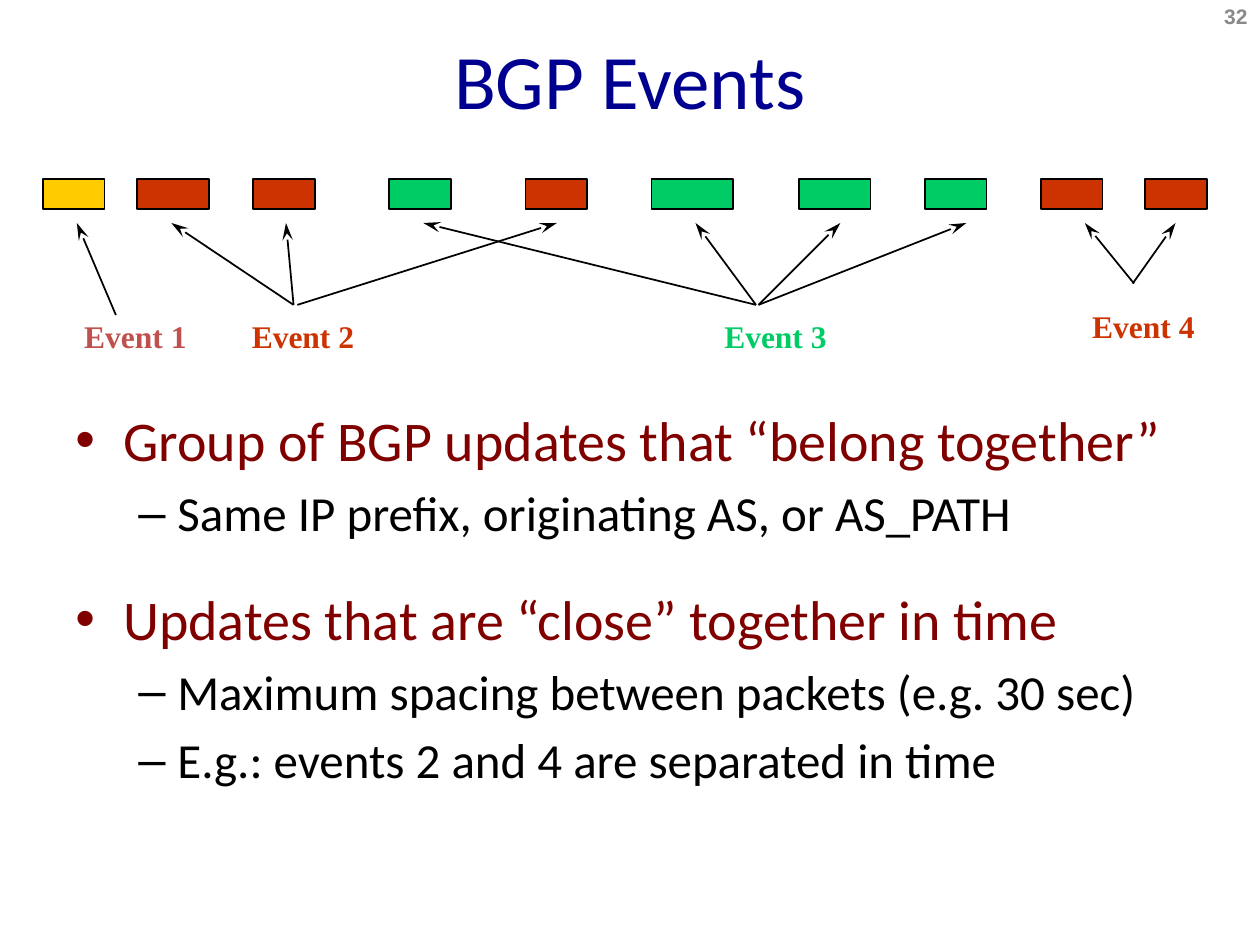
from lxml import etree
from pptx import Presentation
from pptx.dml.color import RGBColor
from pptx.enum.shapes import MSO_CONNECTOR, MSO_SHAPE
from pptx.enum.text import MSO_ANCHOR, PP_ALIGN
from pptx.oxml.ns import qn
from pptx.util import Inches, Pt

RECTANGLE = MSO_SHAPE.RECTANGLE
STRAIGHT = MSO_CONNECTOR.STRAIGHT
TOP, MIDDLE = MSO_ANCHOR.TOP, MSO_ANCHOR.MIDDLE
LEFT, CENTER, RIGHT = PP_ALIGN.LEFT, PP_ALIGN.CENTER, PP_ALIGN.RIGHT

BLACK = RGBColor(0x00, 0x00, 0x00)
YELLOW = RGBColor(0xFF, 0xCC, 0x00)
RED = RGBColor(0xCC, 0x33, 0x00)
GREEN = RGBColor(0x00, 0xCC, 0x66)
ROSE = RGBColor(0xC0, 0x50, 0x4D)
NAVY = RGBColor(0x00, 0x00, 0x90)
MAROON = RGBColor(0x80, 0x00, 0x00)
GRAY = RGBColor(0x89, 0x89, 0x89)

UPDATE_TOP, UPDATE_HEIGHT = 1.42, 0.24
ARROW_TOP = 1.77

# Updates on the timeline: left, width, colour
UPDATES = [
    (0.34, 0.49, YELLOW), (1.09, 0.57, RED), (2.01, 0.49, RED),
    (3.09, 0.49, GREEN), (4.17, 0.49, RED), (5.17, 0.65, GREEN),
    (6.34, 0.57, GREEN), (7.34, 0.49, GREEN), (8.26, 0.49, RED),
    (9.09, 0.49, RED),
]

# Events: label, label left, label top, colour, arrows (tip x, tail x, tail y)
EVENTS = [
    ("Event 1", 0.57, 2.47, ROSE, [(0.61, 0.92, 2.5)]),
    ("Event 2", 1.9, 2.47, RED,
     [(1.36, 2.33, 2.42), (2.27, 2.33, 2.42), (4.42, 2.36, 2.42)]),
    ("Event 3", 5.65, 2.47, GREEN,
     [(3.36, 6, 2.42), (5.52, 6, 2.42), (6.67, 6.02, 2.42), (7.67, 6.02, 2.42)]),
    ("Event 4", 8.57, 2.39, RED, [(8.61, 9, 2.25), (9.33, 8.99, 2.25)]),
]

# Bullet levels: character, text indent, hanging indent, size, colour
LEVELS = [("•", 0.38, 0.38, 32, MAROON), ("–", 0.81, 0.31, 28, BLACK)]

# Bullets: level, space after, text
BULLETS = [
    (0, 0, "Group of BGP updates that “belong together”"),
    (1, 18, "Same IP prefix, originating AS, or AS_PATH"),
    (0, 0, "Updates that are “close” together in time"),
    (1, 0, "Maximum spacing between packets (e.g. 30 sec)"),
    (1, 0, "E.g.: events 2 and 4 are separated in time"),
]


def add_text_frame(slide, left, top, width, height, anchor=TOP, wrap=True):
    box = slide.shapes.add_textbox(
        Inches(left), Inches(top), Inches(width), Inches(height))
    frame = box.text_frame
    frame.word_wrap = wrap
    frame.vertical_anchor = anchor
    return frame


def write(paragraph, text, color, alignment=LEFT, **font_values):
    paragraph.alignment = alignment
    run = paragraph.add_run()
    run.text = text
    run.font.color.rgb = color
    for name, value in font_values.items():
        setattr(run.font, name, value)


def add_update(slide, left, width, color):
    shape = slide.shapes.add_shape(
        RECTANGLE, Inches(left), Inches(UPDATE_TOP),
        Inches(width), Inches(UPDATE_HEIGHT))
    shape.shadow.inherit = False
    shape.fill.solid()
    shape.fill.fore_color.rgb = color
    shape.line.color.rgb = BLACK
    shape.line.width = Pt(1)


def add_arrow(slide, tip_x, tail_x, tail_y):
    connector = slide.shapes.add_connector(
        STRAIGHT, Inches(tip_x), Inches(ARROW_TOP), Inches(tail_x), Inches(tail_y))
    connector.line.color.rgb = BLACK
    connector.line.width = Pt(1)
    etree.SubElement(connector.line._get_or_add_ln(), qn("a:headEnd"),
                     type="stealth", w="med", len="lg")
    etree.SubElement(connector._element.spPr, qn("a:effectLst"))


def add_event(slide, label, left, top, color, arrows):
    for arrow in arrows:
        add_arrow(slide, *arrow)
    frame = add_text_frame(slide, left, top, 1.02, 0.4, wrap=False)
    write(frame.paragraphs[0], label, color,
          name="Times New Roman", size=Pt(18), bold=True)


def add_bullet(paragraph, level, space_after, text):
    character, indent, hanging, size, color = LEVELS[level]
    paragraph.level = level
    paragraph.space_before = Pt(size * 0.2)
    paragraph.space_after = Pt(space_after)
    write(paragraph, text, color, name="Calibri", size=Pt(size))
    properties = paragraph._p.get_or_add_pPr()
    properties.set("marL", str(Inches(indent)))
    properties.set("indent", str(-Inches(hanging)))
    etree.SubElement(properties, qn("a:buFont"), typeface="Arial")
    etree.SubElement(properties, qn("a:buChar"), char=character)


def main():
    presentation = Presentation()
    presentation.slide_width = Inches(10)
    presentation.slide_height = Inches(7.5)
    slide = presentation.slides.add_slide(presentation.slide_layouts[6])

    # Timeline of updates, grouped into events
    for update in UPDATES:
        add_update(slide, *update)
    for event in EVENTS:
        add_event(slide, *event)

    # Title
    title = add_text_frame(slide, 0.5, 0, 9, 1.25, MIDDLE)
    write(title.paragraphs[0], "BGP Events", NAVY, CENTER,
          name="Calibri", size=Pt(44))

    # Bullet list
    body = add_text_frame(slide, 0.5, 3.17, 9.25, 4.08)
    for index, bullet in enumerate(BULLETS):
        paragraph = body.add_paragraph() if index else body.paragraphs[0]
        add_bullet(paragraph, *bullet)

    # Slide number
    number = add_text_frame(slide, 7.67, -0.07, 2.33, 0.4, MIDDLE)
    write(number.paragraphs[0], "32", GRAY, RIGHT,
          name="Arial", size=Pt(12), bold=True)

    presentation.save("out.pptx")


if __name__ == "__main__":
    main()
